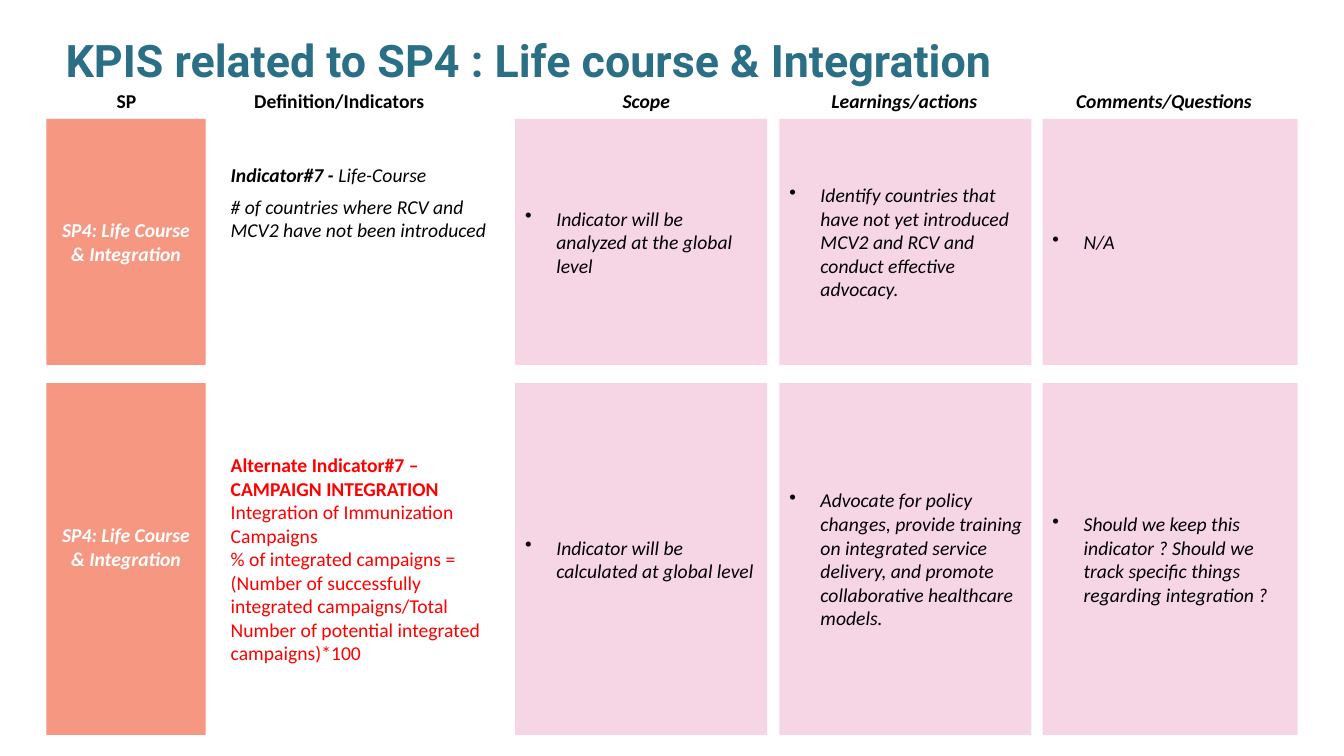
"""Build the SP4 KPI slide: a header line and two rows of indicator cells."""
import pptx
import pptx.dml.color
import pptx.enum.shapes
import pptx.enum.text
import pptx.oxml.ns
import pptx.util
from lxml import etree

Inches = pptx.util.Inches
Pt = pptx.util.Pt
ALIGN = pptx.enum.text.PP_ALIGN
ANCHOR = pptx.enum.text.MSO_ANCHOR

COLORS = {"title": "2B6F86", "sp": "F69782", "cell": "F6D5E5",
          "text": "000000", "light": "FFFFFF", "alert": "FF0000"}


def rgb(name):
    """Return the palette colour with this name."""
    return pptx.dml.color.RGBColor.from_string(COLORS[name])


def write(p, text, size=14, font="Calibri", color="text", bold=False,
          italic=False, align=ALIGN.LEFT, bullet=False, after=0):
    """Add one formatted run to a paragraph."""
    p.alignment = align
    p.space_after = Pt(after)
    if bullet:
        pPr = p._p.get_or_add_pPr()
        pPr.set("marL", str(Inches(0.31)))
        pPr.set("indent", str(-Inches(0.31)))
        etree.SubElement(pPr, pptx.oxml.ns.qn("a:buChar")).set("char", "•")
    r = p.add_run()
    r.text = text
    r.font.size = Pt(size)
    r.font.name = font
    r.font.bold = bold
    r.font.italic = italic
    r.font.color.rgb = rgb(color)


class KpiSlide:
    """Hold the current slide and draw its kinds of element."""

    def __init__(self, prs):
        """Add a title-only slide."""
        self.s = prs.slides.add_slide(prs.slide_layouts[5])

    def frame(self, sp, anchor=ANCHOR.MIDDLE, right=0.1, bottom=0.05):
        """Set wrapping, anchor and insets, and return the text frame."""
        tf = sp.text_frame
        tf.word_wrap = True
        tf.auto_size = pptx.enum.text.MSO_AUTO_SIZE.NONE
        tf.vertical_anchor = anchor
        tf.margin_left, tf.margin_right = Inches(0.1), Inches(right)
        tf.margin_top, tf.margin_bottom = Inches(0.05), Inches(bottom)
        return tf

    def title(self, text, box):
        """Place and fill the title placeholder."""
        sp = self.s.shapes.title
        sp.left, sp.top, sp.width, sp.height = map(Inches, box)
        p = self.frame(sp, ANCHOR.BOTTOM).paragraphs[0]
        p.line_spacing = 0.9
        write(p, text, size=32, font="Roboto", color="title", bold=True)

    def label(self, box, paragraphs, bottom=0.05):
        """Add a text box from paragraphs of (text, format) runs."""
        sp = self.s.shapes.add_textbox(*map(Inches, box))
        tf = self.frame(sp, bottom=bottom)
        for i, runs in enumerate(paragraphs):
            p = tf.add_paragraph() if i else tf.paragraphs[0]
            for text, fmt in runs:
                write(p, text, **fmt)

    def block(self, box, text, fill, right=0.1, bottom=0.05, **fmt):
        """Add a filled rectangle with one paragraph."""
        sp = self.s.shapes.add_shape(
            pptx.enum.shapes.MSO_SHAPE.RECTANGLE, *map(Inches, box))
        sp.shadow.inherit = False
        sp.fill.solid()
        sp.fill.fore_color.rgb = rgb(fill)
        sp.line.fill.background()
        tf = self.frame(sp, right=right, bottom=bottom)
        write(tf.paragraphs[0], text, **fmt)


HEADERS = [("SP", 0.58, 1.35, False),
           ("Definition/Indicators", 2.37, 1.99, False),
           ("Scope", 5.69, 1.44, True),
           ("Learnings/actions", 8.07, 1.8, True),
           ("Comments/Questions", 10.34, 2.41, True)]

CELL_COLUMNS = [(5.11, 2.5, 0.1), (7.73, 2.5, 0.03), (10.34, 2.53, 0.1)]

RED = {"color": "alert"}
LIFE_COURSE = [
    [("Indicator#7 - ", {"bold": True, "italic": True, "after": 6}),
     ("Life-Course", {"italic": True, "after": 6})],
    [("# of countries where RCV and MCV2 have not been introduced",
      {"italic": True})]]
CAMPAIGNS = [
    [("Alternate Indicator#7 – CAMPAIGN INTEGRATION",
      {"bold": True, **RED})],
    [("Integration of Immunization Campaigns", RED)],
    [("% of integrated campaigns =", RED)],
    [("(Number of successfully integrated campaigns/Total Number of "
      "potential integrated campaigns)*100", RED)]]

ROWS = [
    {"top": 1.18, "height": 2.44, "sp_bottom": 0.05,
     "indicator": LIFE_COURSE, "indicator_bottom": 0.84,
     "cells": ["Indicator will be analyzed at the global level",
               "Identify countries that have not yet introduced MCV2 and "
               "RCV and conduct effective advocacy.",
               "N/A"]},
    {"top": 3.8, "height": 3.49, "sp_bottom": 0.29,
     "indicator": CAMPAIGNS, "indicator_bottom": 0.05,
     "cells": ["Indicator will be calculated at global level",
               "Advocate for policy changes, provide training on integrated "
               "service delivery, and promote collaborative healthcare "
               "models.",
               "Should we keep this indicator ? Should we track specific "
               "things regarding integration ?"]}]


def main():
    """Build and save the slide."""
    prs = pptx.Presentation()
    prs.slide_width, prs.slide_height = Inches(13.33), Inches(7.5)
    kpi = KpiSlide(prs)
    kpi.title("KPIS related to SP4 : Life course & Integration",
              (0.55, 0.18, 12.16, 0.74))
    for text, left, width, italic in HEADERS:
        fmt = {"bold": True, "italic": italic, "align": ALIGN.CENTER}
        kpi.label((left, 0.88, width, 0.24), [[(text, fmt)]])
    for row in ROWS:
        top, height = row["top"], row["height"]
        kpi.block((0.46, top, 1.58, height), "SP4: Life Course & Integration",
                  "sp", bottom=row["sp_bottom"], color="light", bold=True,
                  italic=True, align=ALIGN.CENTER)
        kpi.label((2.19, top, 2.86, height), row["indicator"],
                  bottom=row["indicator_bottom"])
        for (left, width, right), text in zip(CELL_COLUMNS, row["cells"]):
            kpi.block((left, top, width, height), text, "cell", right=right,
                      italic=True, bullet=True)
    prs.save("out.pptx")


if __name__ == "__main__":
    main()
